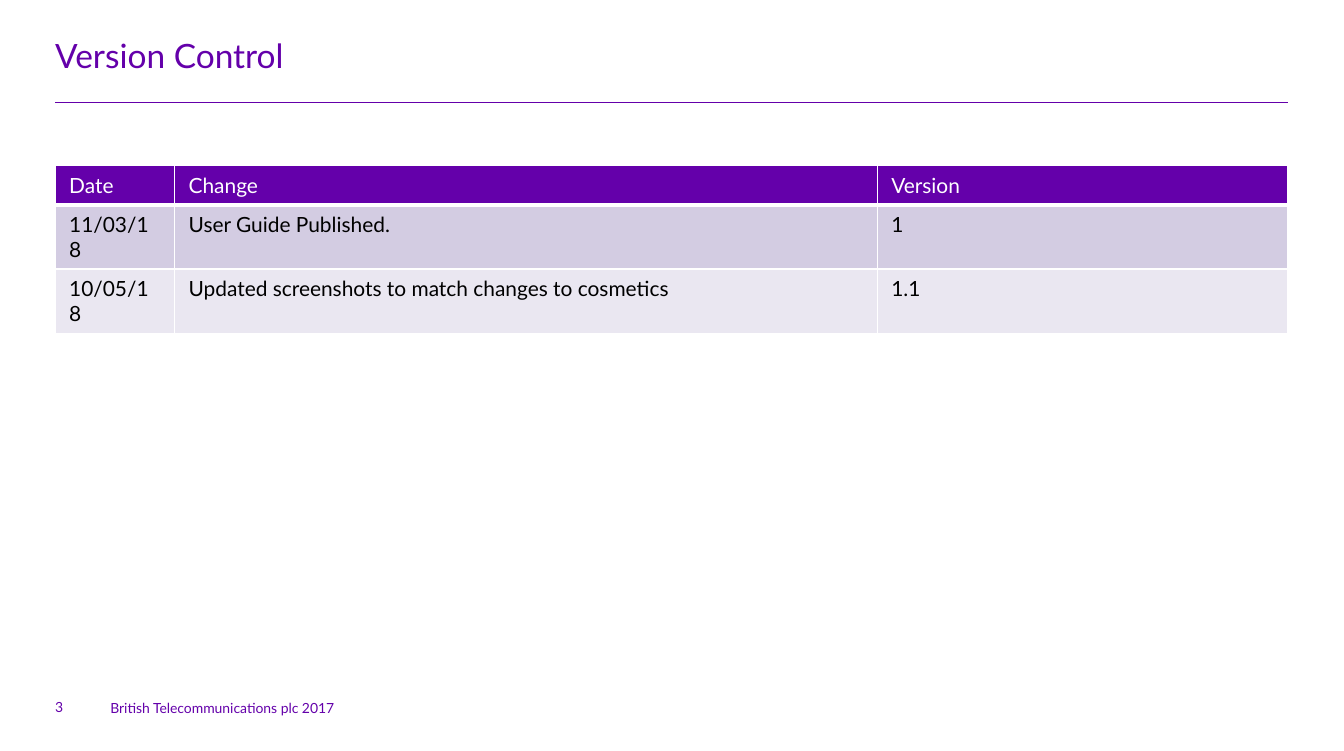
from dataclasses import dataclass

from lxml import etree
from pptx import Presentation
from pptx import util as u
from pptx.dml.color import RGBColor
from pptx.enum import shapes, text
from pptx.oxml.ns import qn

PURPLE, WHITE, BLACK = "6400AA", "FFFFFF", "000000"
FONT = "Lato"
LEFT, WIDTH = 0.55, 12.28


@dataclass
class Label:
    content: str
    left: float
    top: float
    width: float
    height: float
    size: int
    anchor: text.MSO_ANCHOR


@dataclass
class Row:
    cells: tuple[str, ...]
    fill: str
    font_color: str
    bottom_border: int = 1


LABELS = [
    Label("British Telecommunications plc 2017", 1.1, 6.84, 2.36, 0.29, 10, text.MSO_ANCHOR.BOTTOM),
    Label("Version Control", LEFT, 0.35, WIDTH, 0.47, 24, text.MSO_ANCHOR.TOP),
    Label("3", LEFT, 6.81, 0.39, 0.31, 10, text.MSO_ANCHOR.BOTTOM),
]
COLUMN_WIDTHS = (1.19, 7, 4.09)
ROW_HEIGHT = 0.38
ROWS = [
    Row(("Date", "Change", "Version"), PURPLE, WHITE, bottom_border=3),
    Row(("11/03/18", "User Guide Published.", "1"), "D3CCE2", BLACK),
    Row(("10/05/18", "Updated screenshots to match changes to cosmetics", "1.1"), "EAE7F1", BLACK),
]


def color(value: str) -> RGBColor:
    return RGBColor.from_string(value)


def format_runs(text_frame, size: int, font_color: str) -> None:
    for paragraph in text_frame.paragraphs:
        for run in paragraph.runs:
            run.font.name = FONT
            run.font.size = u.Pt(size)
            run.font.bold = False
            run.font.color.rgb = color(font_color)


def add_label(slide, label: Label) -> None:
    box = slide.shapes.add_textbox(
        u.Inches(label.left), u.Inches(label.top), u.Inches(label.width), u.Inches(label.height)
    )
    frame = box.text_frame
    frame.word_wrap = True
    frame.vertical_anchor = label.anchor
    frame.margin_left = frame.margin_right = frame.margin_top = frame.margin_bottom = 0
    frame.text = label.content
    format_runs(frame, label.size, PURPLE)


def add_rule(slide, top: float) -> None:
    rule = slide.shapes.add_connector(
        shapes.MSO_CONNECTOR.STRAIGHT,
        u.Inches(LEFT), u.Inches(top), u.Inches(LEFT + WIDTH), u.Inches(top),
    )
    rule.line.color.rgb = color(PURPLE)
    rule.line.width = u.Pt(0.25)
    etree.SubElement(rule._element.spPr, qn("a:effectLst"))


def set_borders(cell, bottom: int) -> None:
    properties = cell._tc.get_or_add_tcPr()
    for tag, points in (("lnL", 1), ("lnR", 1), ("lnT", 1), ("lnB", bottom)):
        line = etree.SubElement(properties, qn(f"a:{tag}"), w=str(u.Pt(points)))
        fill = etree.SubElement(line, qn("a:solidFill"))
        etree.SubElement(fill, qn("a:srgbClr"), val=WHITE)


def format_cell(cell, content: str, row: Row) -> None:
    cell.margin_left = cell.margin_right = u.Inches(0.14)
    cell.margin_top = cell.margin_bottom = u.Inches(0.07)
    set_borders(cell, row.bottom_border)
    cell.fill.solid()
    cell.fill.fore_color.rgb = color(row.fill)
    cell.text_frame.text = content
    format_runs(cell.text_frame, 15, row.font_color)


def add_version_table(slide, top: float) -> None:
    table = slide.shapes.add_table(
        len(ROWS), len(COLUMN_WIDTHS),
        u.Inches(LEFT), u.Inches(top), u.Inches(WIDTH), u.Inches(ROW_HEIGHT * len(ROWS)),
    ).table
    for column, width in zip(table.columns, COLUMN_WIDTHS):
        column.width = u.Inches(width)
    for table_row, row in zip(table.rows, ROWS):
        table_row.height = u.Inches(ROW_HEIGHT)
        for cell, content in zip(table_row.cells, row.cells):
            format_cell(cell, content, row)


def main() -> None:
    presentation = Presentation()
    presentation.slide_width = u.Inches(13.39)
    presentation.slide_height = u.Inches(7.48)
    slide = presentation.slides.add_slide(presentation.slide_layouts[6])

    # Title, footer and rule
    add_rule(slide, 1.02)
    for label in LABELS:
        add_label(slide, label)

    # Version history
    add_version_table(slide, 1.65)

    presentation.save("out.pptx")


if __name__ == "__main__":
    main()
